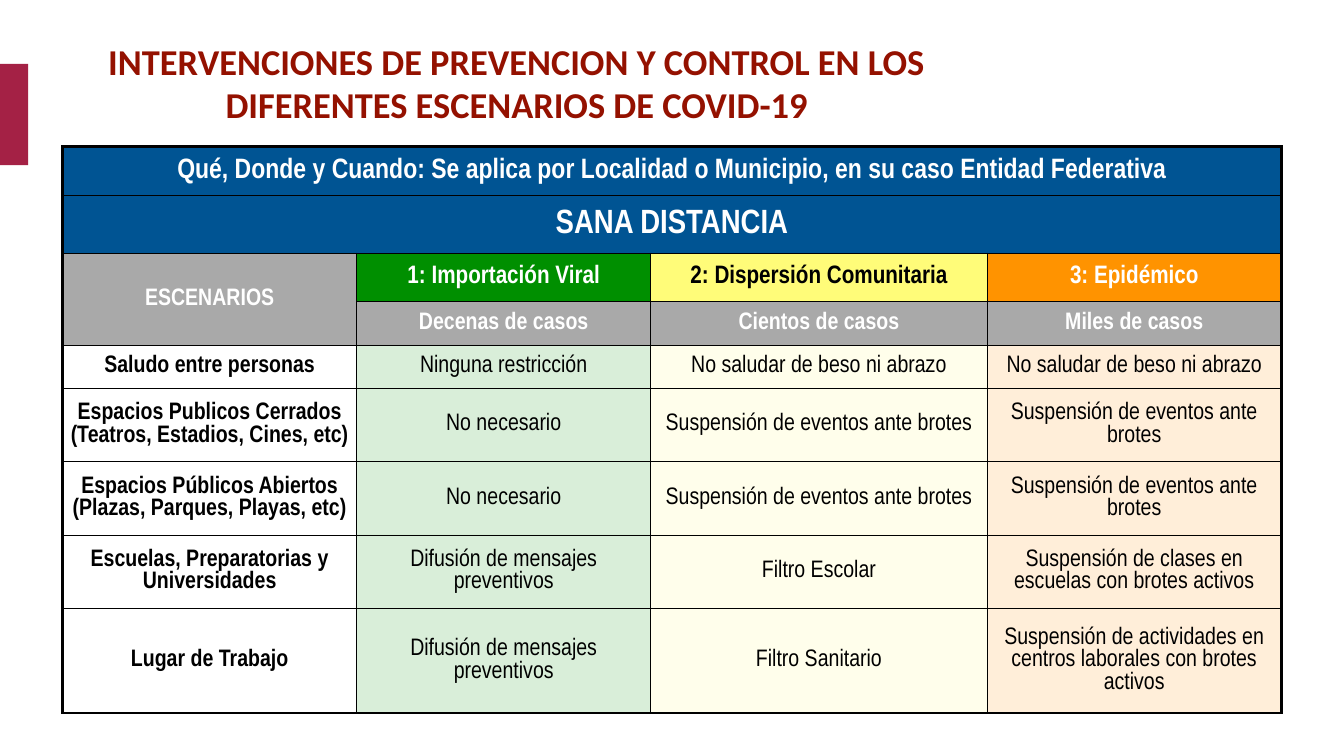
from lxml import etree
from pptx import Presentation
from pptx.dml.color import RGBColor
from pptx.enum.shapes import MSO_SHAPE
from pptx.enum.text import MSO_ANCHOR, MSO_AUTO_SIZE, PP_ALIGN
from pptx.oxml.ns import qn
from pptx.util import Cm, Pt

RECT = MSO_SHAPE.RECTANGLE
MIDDLE = MSO_ANCHOR.MIDDLE
GROW = MSO_AUTO_SIZE.SHAPE_TO_FIT_TEXT
CENTER = PP_ALIGN.CENTER

WHITE = RGBColor(0xFF, 0xFF, 0xFF)
BLACK = RGBColor(0x00, 0x00, 0x00)
WINE = RGBColor(0xA4, 0x21, 0x45)
RED = RGBColor(0x94, 0x11, 0x00)
BLUE = RGBColor(0x00, 0x54, 0x93)
GRAY = RGBColor(0xA9, 0xA9, 0xA9)
GREEN = RGBColor(0x00, 0x8F, 0x00)
YELLOW = RGBColor(0xFF, 0xFC, 0x79)
ORANGE = RGBColor(0xFF, 0x93, 0x00)

TITLE = ("INTERVENCIONES DE PREVENCION Y CONTROL EN LOS "
         "DIFERENTES ESCENARIOS DE COVID-19")
BANNERS = [
    ("Qué, Donde y Cuando: Se aplica por Localidad o Municipio, "
     "en su caso Entidad Federativa", 20),
    ("SANA DISTANCIA", 24),
]
STAGES = [
    ("1: Importación Viral", "Decenas de casos", GREEN, WHITE),
    ("2: Dispersión Comunitaria", "Cientos de casos", YELLOW, BLACK),
    ("3: Epidémico", "Miles de casos", ORANGE, WHITE),
]
ACTIONS = [
    ("Saludo entre personas", "Ninguna restricción",
     "No saludar de beso ni abrazo", "No saludar de beso ni abrazo"),
    ("Espacios Publicos Cerrados (Teatros, Estadios, Cines, etc)", "No necesario",
     "Suspensión de eventos ante brotes", "Suspensión de eventos ante brotes"),
    ("Espacios Públicos Abiertos (Plazas, Parques, Playas, etc)", "No necesario",
     "Suspensión de eventos ante brotes", "Suspensión de eventos ante brotes"),
    ("Escuelas, Preparatorias y Universidades", "Difusión de mensajes preventivos",
     "Filtro Escolar", "Suspensión de clases en escuelas con brotes activos"),
    ("Lugar de Trabajo", "Difusión de mensajes preventivos", "Filtro Sanitario",
     "Suspensión de actividades en centros laborales con brotes activos"),
]
WIDTHS = [7.41, 7.41, 8.48, 7.41]
HEIGHTS = [1.24, 1.45, 1.22, 1.09, 1.09, 1.85, 1.85, 1.85, 2.64]
# Line widths in points, from left to right and from top to bottom
UPRIGHTS = [2, 1, 1, 1, 2]
LEVELS = [2, 0.35, 1, 0.35, 0.5, 0.35, 0.35, 0.35, 0.35, 2]


def style(frame, face, size, color, bold):
    for para in frame.paragraphs:
        para.alignment = CENTER
        for run in para.runs:
            font = run.font
            font.name, font.size, font.bold = face, Pt(size), bold
            font.color.rgb = color


def add_bar(slide):
    bar = slide.shapes.add_shape(RECT, 0, Cm(1.61), Cm(0.71), Cm(2.55))
    bar.shadow.inherit = False
    bar.fill.solid()
    bar.fill.fore_color.rgb = WINE
    bar.line.fill.background()


def set_title(slide):
    title = slide.shapes.title
    title.left, title.top = Cm(1.27), Cm(0.88)
    title.width, title.height = Cm(23.52), Cm(2.39)
    frame = title.text_frame
    frame.text = TITLE
    frame.word_wrap = True
    frame.auto_size = GROW
    frame.vertical_anchor = MIDDLE
    frame.margin_left = frame.margin_right = Cm(0.13)
    frame.margin_top = frame.margin_bottom = Cm(0.13)
    style(frame, "Calibri", 26, RED, True)


def add_grid(slide):
    shape = slide.shapes.add_table(
        len(HEIGHTS), len(WIDTHS), Cm(1.58), Cm(3.69),
        Cm(sum(WIDTHS)), Cm(sum(HEIGHTS)))
    grid = shape.table
    grid.first_row = grid.horz_banding = False
    for col, width in zip(grid.columns, WIDTHS):
        col.width = Cm(width)
    for row, height in zip(grid.rows, HEIGHTS):
        row.height = Cm(height)
    for row in range(len(BANNERS)):
        grid.cell(row, 0).merge(grid.cell(row, len(WIDTHS) - 1))
    grid.cell(2, 0).merge(grid.cell(3, 0))
    return grid


def add_edges(grid):
    """Draw the border lines of each visible cell."""
    for row in range(len(HEIGHTS)):
        for col in range(len(WIDTHS)):
            cell = grid.cell(row, col)
            if cell.is_spanned:
                continue
            right, below = col + 1, row + 1
            if cell.is_merge_origin:
                right, below = col + cell.span_width, row + cell.span_height
            edges = {"a:lnL": UPRIGHTS[col], "a:lnR": UPRIGHTS[right],
                     "a:lnT": LEVELS[row], "a:lnB": LEVELS[below]}
            props = cell._tc.get_or_add_tcPr()
            for tag, width in edges.items():
                line = etree.SubElement(props, qn(tag), w=str(int(Pt(width))))
                paint = etree.SubElement(line, qn("a:solidFill"))
                etree.SubElement(paint, qn("a:srgbClr"), val=str(BLACK))


def fill_cell(cell, text, fill, color=WHITE, size=17, bold=True, alpha=None):
    cell.vertical_anchor = MIDDLE
    cell.margin_left = cell.margin_right = Cm(0.15)
    cell.margin_top = cell.margin_bottom = Cm(0.15)
    cell.fill.solid()
    cell.fill.fore_color.rgb = fill
    if alpha:
        tint = cell._tc.tcPr.find(qn("a:solidFill")).find(qn("a:srgbClr"))
        etree.SubElement(tint, qn("a:alpha"), val=str(alpha * 1000))
    frame = cell.text_frame
    frame.text = text
    style(frame, "Arial Narrow", size, color, bold)


def fill_grid(grid):
    for row, (text, size) in enumerate(BANNERS):
        fill_cell(grid.cell(row, 0), text, BLUE, size=size)
    fill_cell(grid.cell(2, 0), "ESCENARIOS", GRAY)
    for col, (name, cases, fill, color) in enumerate(STAGES, 1):
        fill_cell(grid.cell(2, col), name, fill, color, 18)
        fill_cell(grid.cell(3, col), cases, GRAY)
    for row, (place, *steps) in enumerate(ACTIONS, 4):
        fill_cell(grid.cell(row, 0), place, WHITE, BLACK)
        for col, (step, stage) in enumerate(zip(steps, STAGES), 1):
            fill_cell(grid.cell(row, col), step, stage[2], BLACK,
                      bold=False, alpha=15)


def main():
    deck = Presentation()
    deck.slide_width, deck.slide_height = Cm(33.87), Cm(19.05)
    slide = deck.slides.add_slide(deck.slide_layouts[5])
    add_bar(slide)
    grid = add_grid(slide)
    add_edges(grid)
    fill_grid(grid)
    set_title(slide)
    deck.save("out.pptx")


if __name__ == "__main__":
    main()
